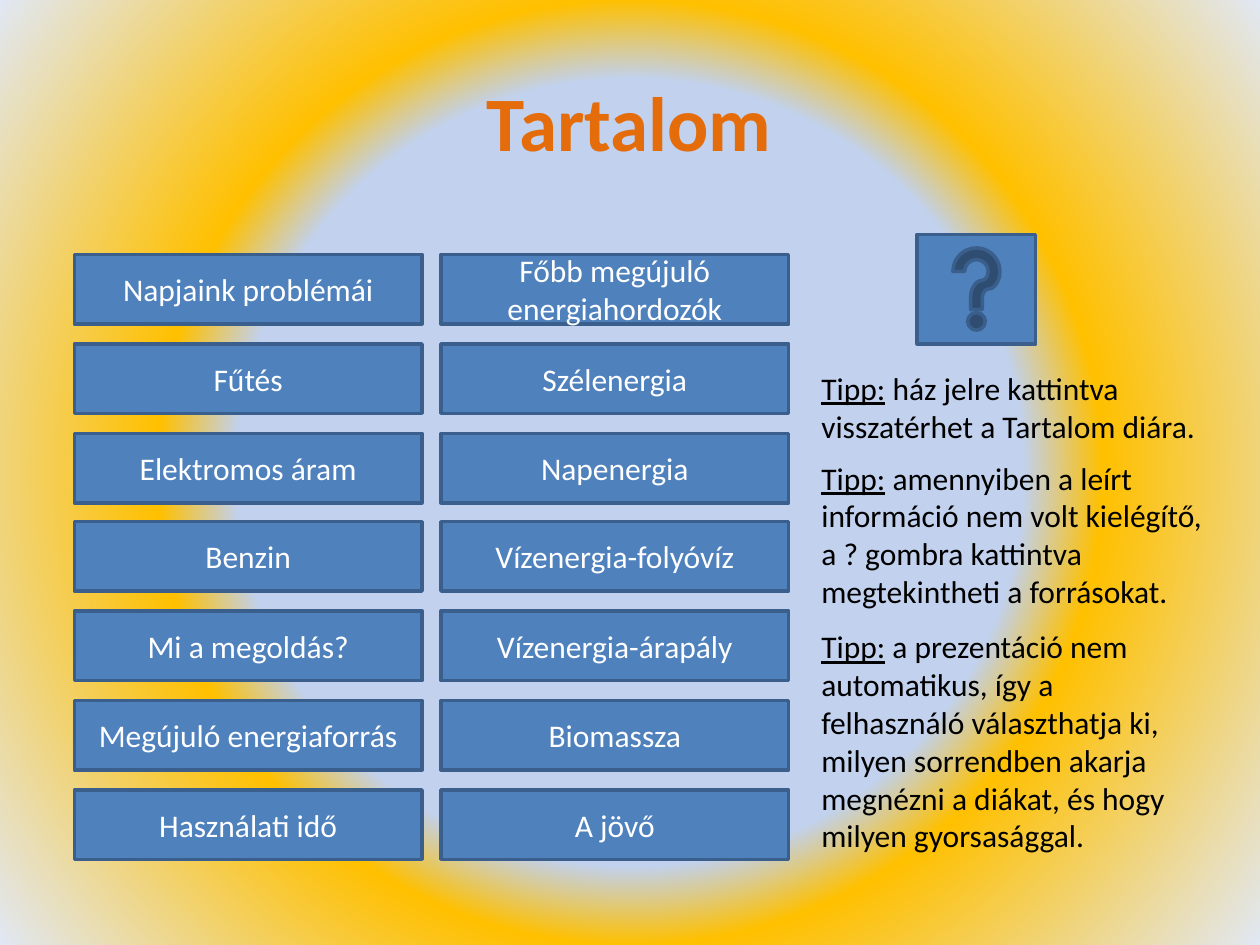
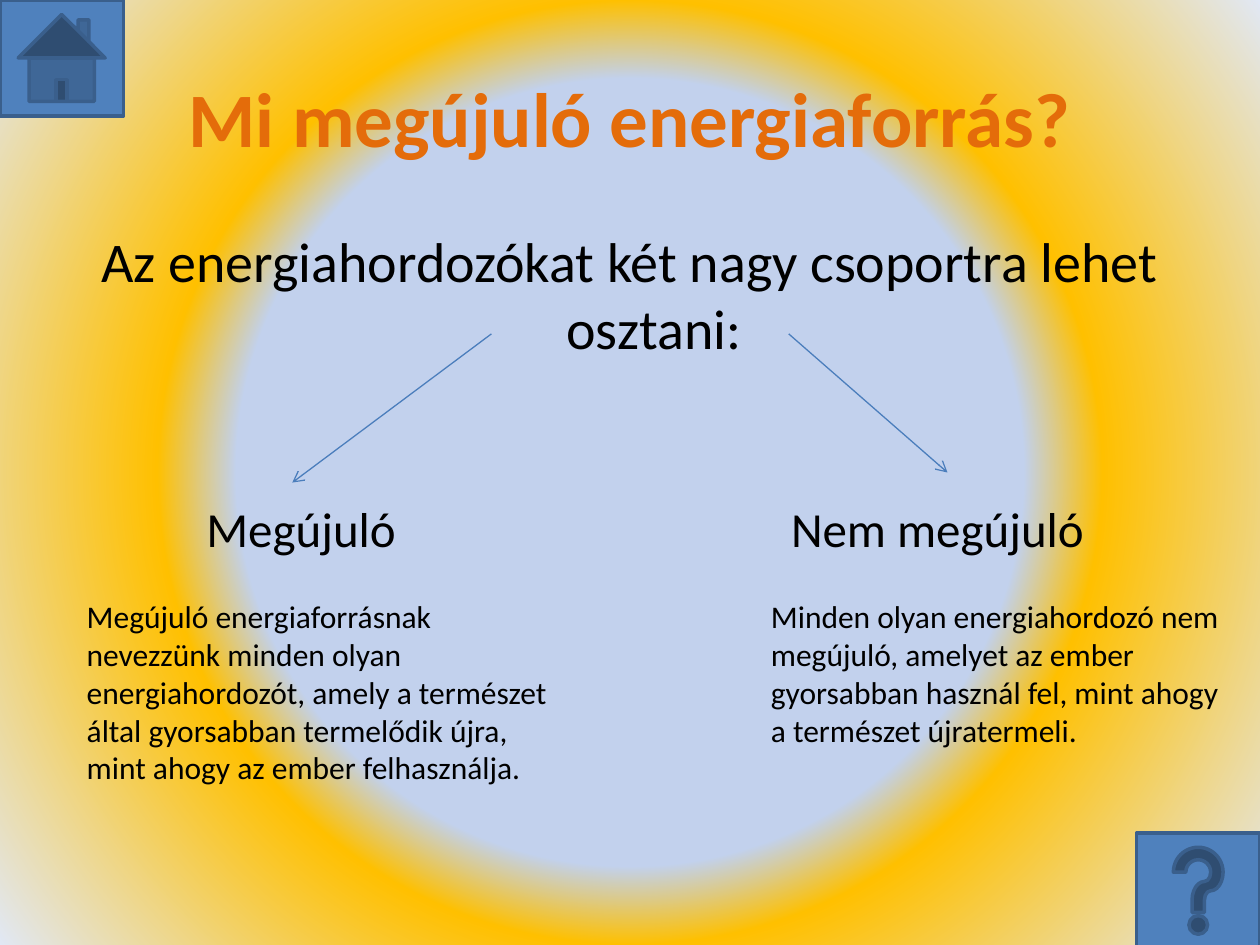
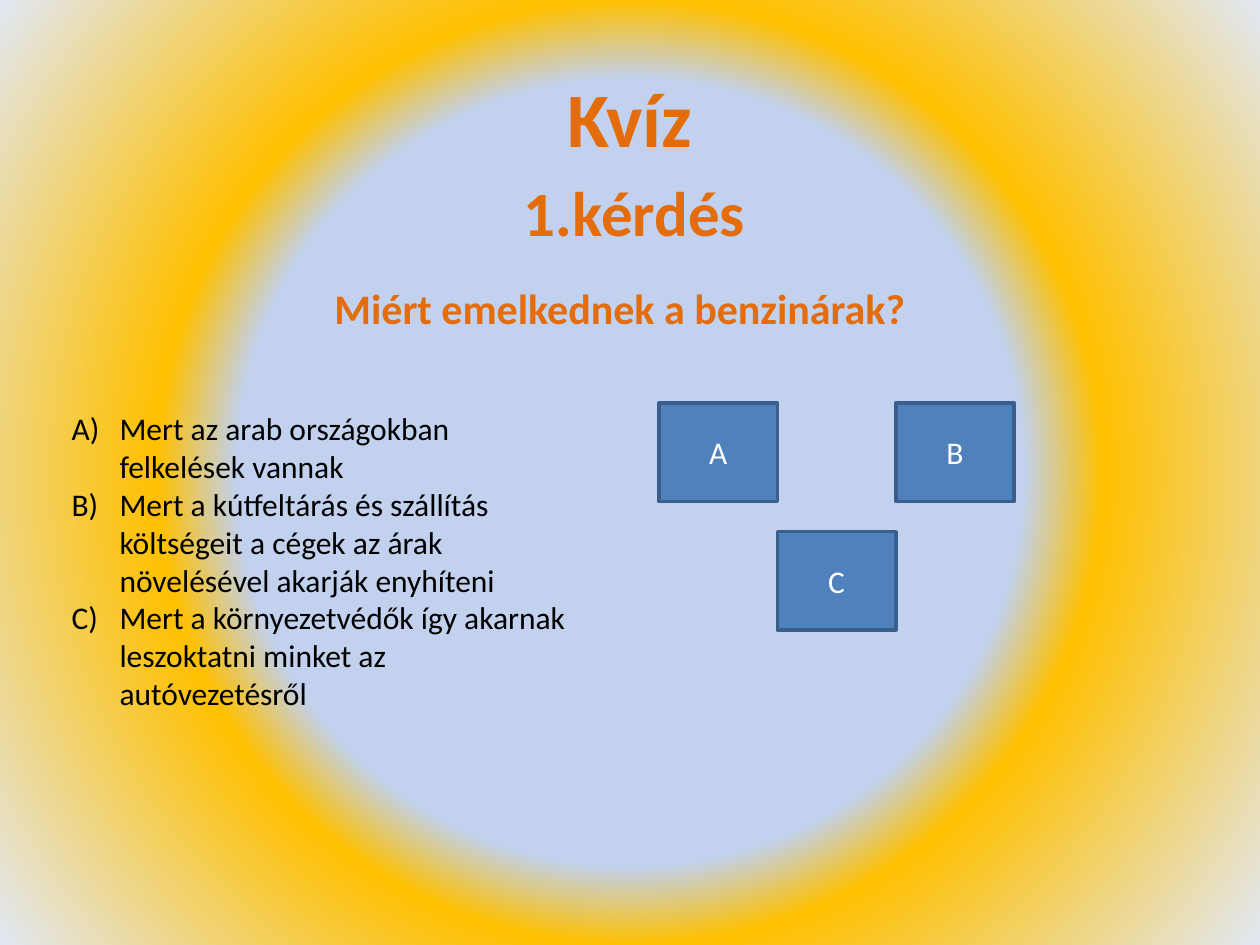
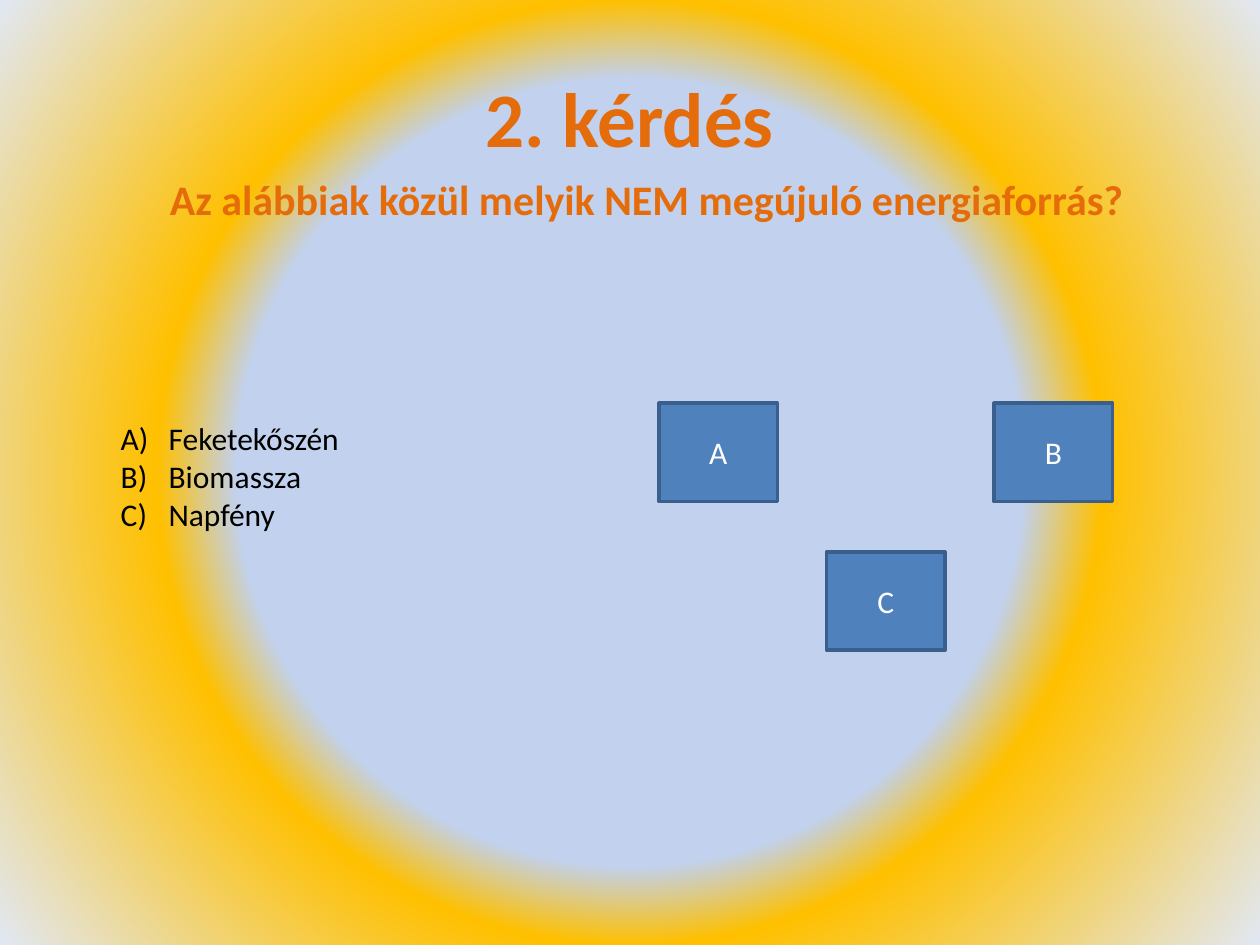
"""Builds four slides on renewable energy: contents, a comparison and two quiz questions."""
from dataclasses import dataclass, replace
from typing import NamedTuple

from lxml.etree import SubElement
from pptx import Presentation
from pptx.dml.color import RGBColor
from pptx.enum.shapes import MSO_CONNECTOR, MSO_SHAPE as Preset
from pptx.enum.text import MSO_ANCHOR as Anchor, MSO_AUTO_SIZE as AutoSize, PP_ALIGN as Align
from pptx.oxml import parse_xml
from pptx.oxml.ns import nsdecls, qn
from pptx.presentation import Presentation as Deck
from pptx.slide import Slide
from pptx.util import Emu, Pt

EMU_PER_PX = 9144


class Frame(NamedTuple):
    left: int
    top: int
    width: int
    height: int


class Style(NamedTuple):
    size: int
    color: str
    bold: bool = False
    underline: bool = False


class Span(NamedTuple):
    text: str
    style: Style


@dataclass(frozen=True)
class Theme:
    font: str = "Calibri"
    button_fill: str = "4F81BD"
    button_line: str = "3A5F8C"
    button_line_points: float = 2
    arrow: str = "4B7EBC"
    arrow_points: float = 0.75
    backdrop: tuple[tuple[int, str], ...] = ((50, "C2D1ED"), (60, "FFC000"), (100, "E1E8F5"))
    title: Style = Style(44, "E46C0A", bold=True)
    subtitle: Style = Style(36, "E46C0A", bold=True)
    question: Style = Style(24, "E46C0A", bold=True)
    lead: Style = Style(32, "000000")
    group: Style = Style(28, "000000")
    body: Style = Style(18, "000000")
    tip: Style = Style(18, "000000", underline=True)
    button: Style = Style(18, "FFFFFF")


@dataclass(frozen=True)
class TextBlock:
    frame: Frame
    paras: tuple[tuple[Span, ...], ...]
    align: Align = Align.LEFT
    anchor: Anchor = Anchor.TOP
    grows: bool = True
    hanging: int = 0
    lettered: bool = False
    space_before: int = 0


@dataclass(frozen=True)
class Button:
    frame: Frame
    label: str = ""
    preset: Preset = Preset.ACTION_BUTTON_CUSTOM


@dataclass(frozen=True)
class Quiz:
    answers_frame: Frame
    answers: tuple[str, ...]
    right_button_left: int
    lower_button_top: int


THEME = Theme()
SLIDE_WIDTH, SLIDE_HEIGHT = 1000, 750
TITLE_FRAME = Frame(50, 30, 900, 125)
HANGING = 38

MENU_LEFTS = (59, 350)
MENU_TOP, MENU_LAST_TOP = 202, 627
MENU_WIDTH, MENU_HEIGHT = 276, 55
MENU = (
    ("Napjaink problémái", "Főbb megújuló energiahordozók"),
    ("Fűtés", "Szélenergia"),
    ("Elektromos áram", "Napenergia"),
    ("Benzin", "Vízenergia-folyóvíz"),
    ("Mi a megoldás?", "Vízenergia-árapály"),
    ("Megújuló energiaforrás", "Biomassza"),
    ("Használati idő", "A jövő"),
)
TIPS = (
    (Frame(642, 288, 339, 71), " ház jelre kattintva visszatérhet a Tartalom diára."),
    (Frame(642, 359, 339, 131), " amennyiben a leírt információ nem volt kielégítő, "
                                "a ? gombra kattintva megtekintheti a forrásokat."),
    (Frame(642, 493, 323, 192), " a prezentáció nem automatikus, így a felhasználó választhatja ki, "
                                "milyen sorrendben akarja megnézni a diákat, és hogy milyen gyorsasággal."),
)

ARROWS = (((390, 265), (232, 383)), ((626, 265), (752, 375)))
GROUPS = (
    (Frame(154, 391, 173, 57), "Megújuló"),
    (Frame(618, 391, 260, 57), "Nem megújuló"),
)
DEFINITIONS = (
    (Frame(59, 469, 394, 162), "Megújuló energiaforrásnak nevezzünk minden olyan energiahordozót, "
                               "amely a természet által gyorsabban termelődik újra, "
                               "mint ahogy az ember felhasználja."),
    (Frame(602, 469, 378, 131), "Minden olyan energiahordozó nem megújuló, amelyet az ember "
                                "gyorsabban használ fel, mint ahogy a természet újratermeli."),
)

ANSWER_LEFT, ANSWER_TOP = 523, 320
ANSWER_WIDTH, ANSWER_HEIGHT = 94, 78
PRICE_QUIZ = Quiz(
    Frame(47, 320, 422, 252),
    (
        "Mert az arab országokban felkelések vannak",
        "Mert a kútfeltárás és szállítás költségeit a cégek az árak növelésével akarják enyhíteni",
        "Mert a környezetvédők így akarnak leszoktatni minket az autóvezetésről",
    ),
    right_button_left=711,
    lower_button_top=422,
)
SOURCE_QUIZ = Quiz(
    Frame(86, 328, 359, 101),
    ("Feketekőszén", "Biomassza", "Napfény"),
    right_button_left=789,
    lower_button_top=438,
)


def px(length: int) -> Emu:
    return Emu(length * EMU_PER_PX)


def place(frame: Frame) -> tuple[Emu, ...]:
    return tuple(px(length) for length in frame)


def rgb(color: str) -> RGBColor:
    return RGBColor.from_string(color)


def paint_backdrop(page: Slide) -> None:
    page.background.fill.gradient()
    gradient = next(page.element.iter(qn("a:gradFill")))
    stops = "".join(
        f'<a:gs pos="{percent * 1000}"><a:srgbClr val="{color}"/></a:gs>'
        for percent, color in THEME.backdrop
    )
    circle = parse_xml(
        f'<a:gradFill {nsdecls("a")} rotWithShape="1"><a:gsLst>{stops}</a:gsLst>'
        '<a:path path="circle"><a:fillToRect l="50000" t="50000" r="50000" b="50000"/></a:path>'
        "</a:gradFill>"
    )
    gradient.getparent().replace(gradient, circle)


def add_span(para, span: Span) -> None:
    run = para.add_run()
    run.text = span.text
    font = run.font
    font.name = THEME.font
    font.size = Pt(span.style.size)
    font.bold = span.style.bold
    font.underline = span.style.underline
    font.color.rgb = rgb(span.style.color)


def indent_para(para, hanging: int, lettered: bool) -> None:
    properties = para._p.get_or_add_pPr()
    properties.set("marL", str(px(hanging)))
    properties.set("indent", str(-px(hanging)))
    if lettered:
        SubElement(properties, qn("a:buFont"), typeface="+mj-lt")
        SubElement(properties, qn("a:buAutoNum"), type="alphaUcParenR")


def add_text(page: Slide, block: TextBlock) -> None:
    box = page.shapes.add_textbox(*place(block.frame))
    text = box.text_frame
    text.word_wrap = True
    text.auto_size = AutoSize.SHAPE_TO_FIT_TEXT if block.grows else AutoSize.NONE
    text.vertical_anchor = block.anchor
    for index, spans in enumerate(block.paras):
        para = text.add_paragraph() if index else text.paragraphs[0]
        para.alignment = block.align
        if block.space_before:
            para.space_before = Pt(block.space_before)
        if block.hanging:
            indent_para(para, block.hanging, block.lettered)
        for span in spans:
            add_span(para, span)


def plain(frame: Frame, text: str, style: Style) -> TextBlock:
    return TextBlock(frame, ((Span(text, style),),))


def add_button(page: Slide, button: Button) -> None:
    shape = page.shapes.add_shape(button.preset, *place(button.frame))
    shape.shadow.inherit = False
    shape.fill.solid()
    shape.fill.fore_color.rgb = rgb(THEME.button_fill)
    shape.line.color.rgb = rgb(THEME.button_line)
    shape.line.width = Pt(THEME.button_line_points)
    if button.label:
        text = shape.text_frame
        text.word_wrap = True
        text.vertical_anchor = Anchor.MIDDLE
        para = text.paragraphs[0]
        para.alignment = Align.CENTER
        add_span(para, Span(button.label, THEME.button))


def add_arrow(page: Slide, start: tuple[int, int], end: tuple[int, int]) -> None:
    ends = (px(length) for length in start + end)
    arrow = page.shapes.add_connector(MSO_CONNECTOR.STRAIGHT, *ends)
    arrow.line.color.rgb = rgb(THEME.arrow)
    arrow.line.width = Pt(THEME.arrow_points)
    SubElement(arrow.line._get_or_add_ln(), qn("a:tailEnd"), type="arrow")
    SubElement(arrow._element.spPr, qn("a:effectLst"))


def add_page(deck: Deck, title: str, frame: Frame = TITLE_FRAME) -> Slide:
    page = deck.slides.add_slide(deck.slide_layouts[6])
    paint_backdrop(page)
    heading = plain(frame, title, THEME.title)
    add_text(page, replace(heading, align=Align.CENTER, anchor=Anchor.MIDDLE, grows=False))
    return page


def add_quiz(page: Slide, quiz: Quiz) -> None:
    paras = tuple((Span(answer, THEME.body),) for answer in quiz.answers)
    add_text(page, TextBlock(quiz.answers_frame, paras, hanging=HANGING, lettered=True))
    middle_left = (ANSWER_LEFT + quiz.right_button_left) // 2
    spots = {
        "A": (ANSWER_LEFT, ANSWER_TOP),
        "B": (quiz.right_button_left, ANSWER_TOP),
        "C": (middle_left, quiz.lower_button_top),
    }
    for letter, (left, top) in spots.items():
        add_button(page, Button(Frame(left, top, ANSWER_WIDTH, ANSWER_HEIGHT), letter))


def build_contents(deck: Deck) -> None:
    page = add_page(deck, "Tartalom", Frame(50, 30, 899, 132))
    pitch = (MENU_LAST_TOP - MENU_TOP) / (len(MENU) - 1)
    for row, labels in enumerate(MENU):
        top = round(MENU_TOP + row * pitch)
        for left, label in zip(MENU_LEFTS, labels):
            add_button(page, Button(Frame(left, top, MENU_WIDTH, MENU_HEIGHT), label))
    for frame, advice in TIPS:
        add_text(page, TextBlock(frame, ((Span("Tipp:", THEME.tip), Span(advice, THEME.body)),)))
    add_button(page, Button(Frame(728, 186, 94, 87), preset=Preset.ACTION_BUTTON_HELP))


def build_comparison(deck: Deck) -> None:
    page = add_page(deck, "Mi megújuló energiaforrás?")
    lead = plain(Frame(50, 175, 900, 121),
                 "Az energiahordozókat két nagy csoportra lehet osztani:", THEME.lead)
    add_text(page, replace(lead, align=Align.CENTER, grows=False, hanging=HANGING, space_before=6))
    for start, end in ARROWS:
        add_arrow(page, start, end)
    for entries, style in ((GROUPS, THEME.group), (DEFINITIONS, THEME.body)):
        for frame, text in entries:
            add_text(page, plain(frame, text, style))
    add_button(page, Button(Frame(902, 661, 98, 92), preset=Preset.ACTION_BUTTON_HELP))
    add_button(page, Button(Frame(0, 0, 98, 92), preset=Preset.ACTION_BUTTON_HOME))


def build_price_quiz(deck: Deck) -> None:
    page = add_page(deck, "Kvíz")
    add_text(page, plain(Frame(406, 133, 203, 71), "1.kérdés", THEME.subtitle))
    question = plain(Frame(117, 219, 750, 50), "Miért emelkednek a benzinárak?", THEME.question)
    add_text(page, replace(question, align=Align.CENTER))
    add_quiz(page, PRICE_QUIZ)


def build_source_quiz(deck: Deck) -> None:
    page = add_page(deck, "2. kérdés")
    add_text(page, plain(Frame(125, 133, 813, 50),
                         "Az alábbiak közül melyik NEM megújuló energiaforrás?", THEME.question))
    add_quiz(page, SOURCE_QUIZ)


def main() -> None:
    deck = Presentation()
    deck.slide_width, deck.slide_height = px(SLIDE_WIDTH), px(SLIDE_HEIGHT)
    for build in (build_contents, build_comparison, build_price_quiz, build_source_quiz):
        build(deck)
    deck.save("out.pptx")


if __name__ == "__main__":
    main()
